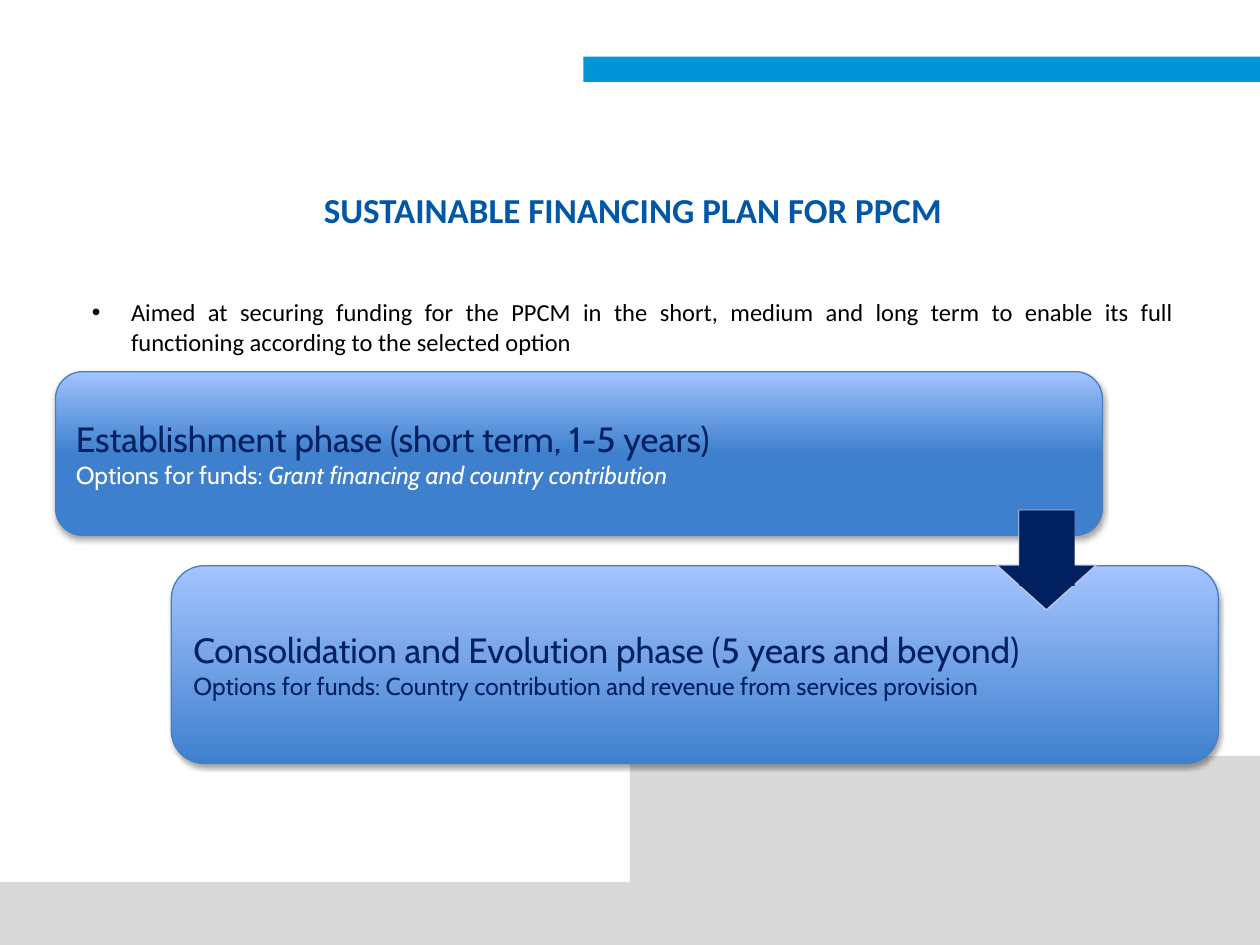
import pptx
import pptx.util
import pptx.dml.color
import pptx.enum.shapes
import pptx.enum.text
import pptx.oxml
import pptx.oxml.ns

Inches, Pt = pptx.util.Inches, pptx.util.Pt
SHAPE = pptx.enum.shapes.MSO_SHAPE
ALIGN = pptx.enum.text.PP_ALIGN
ANCHOR = pptx.enum.text.MSO_ANCHOR
qn = pptx.oxml.ns.qn
NAMESPACE = pptx.oxml.ns.nsdecls("a")

# Content
TITLE = "SUSTAINABLE FINANCING PLAN FOR PPCM"
BULLET = ("Aimed at securing funding for the PPCM in the short, medium and long term "
          "to enable its full functioning according to the selected option")
NAVY = "002060"
# Later phase first, so that the earlier one lies in front
PHASES = [
    {"at": (1.36, 4.49, 8.31, 1.57),
     "stops": [(0, "3F80CE"), (100, "A4C4FF")],
     "heading": "Consolidation and Evolution phase (5 years and beyond)",
     "funds": [("Options for funds: Country contribution and revenue from services provision", False)],
     "funds_color": NAVY},
    {"at": (0.44, 2.95, 8.31, 1.3),
     "stops": [(50, "3F80CE"), (75, "6DA1E6"), (100, "A4C4FF")],
     "heading": "Establishment phase (short term, 1-5 years)",
     "funds": [("Options for funds: ", False), ("Grant financing and country contribution", True)],
     "funds_color": "FFFFFF"},
]
# Crest of the wave: start point, then Bezier segments of three points
WAVE_START = (10.04, 6.46)
WAVE_CURVES = [((8.77, 6.22), (6.79, 6.16), (3.78, 6.63)),
               ((1, 7.07), (0.19, 6.68), (-0.02, 6.51))]
WAVE_BOTTOM = 7.5
CURVE_STEPS = 40


def rgb(value):
    return pptx.dml.color.RGBColor.from_string(value)


def place(shape, left, top, width, height):
    shape.left, shape.top = Inches(left), Inches(top)
    shape.width, shape.height = Inches(width), Inches(height)


def style_font(font, name, size, color, bold=False):
    font.name, font.size, font.bold = name, Pt(size), bold
    font.color.rgb = rgb(color)


def add_flat(shapes, kind, at, color):
    shape = shapes.add_shape(kind, *map(Inches, at))
    paint(shape, color)
    return shape


def paint(shape, color):
    shape.shadow.inherit = False
    shape.fill.solid()
    shape.fill.fore_color.rgb = rgb(color)
    shape.line.fill.background()


def bezier(points, share):
    while len(points) > 1:
        points = [tuple(a + (b - a) * share for a, b in zip(first, second))
                  for first, second in zip(points, points[1:])]
    return points[0]


def add_wave(shapes):
    crest = [WAVE_START]
    for curve in WAVE_CURVES:
        controls = [crest[-1], *curve]
        crest += [bezier(controls, step / CURVE_STEPS) for step in range(1, CURVE_STEPS + 1)]
    right, left = crest[0][0], crest[-1][0]
    builder = shapes.build_freeform(right, WAVE_BOTTOM, scale=Inches(1))
    builder.add_line_segments(crest + [(left, WAVE_BOTTOM)], close=True)
    paint(builder.convert_to_shape(), "D9D9D9")


def add_phase(shapes, phase):
    card = shapes.add_shape(SHAPE.ROUNDED_RECTANGLE, *map(Inches, phase["at"]))
    card.line.color.rgb = rgb("4B7EBC")
    card.line.width = Pt(0.75)

    # Gradient rising from the bottom edge
    card.fill.gradient()
    card.fill.gradient_angle = 90
    stop_list = card._element.spPr.find(qn("a:gradFill")).find(qn("a:gsLst"))
    for stop in list(stop_list):
        stop_list.remove(stop)
    for position, color in phase["stops"]:
        stop_list.append(pptx.oxml.parse_xml(
            f'<a:gs {NAMESPACE} pos="{position * 1000}"><a:srgbClr val="{color}"/></a:gs>'))

    # Soft shadow below
    card.shadow.inherit = False
    card._element.spPr.find(qn("a:effectLst")).append(pptx.oxml.parse_xml(
        f'<a:outerShdw {NAMESPACE} blurRad="{Pt(3.1)}" dist="{Pt(1.8)}" dir="5400000" rotWithShape="0">'
        '<a:srgbClr val="000000"><a:alpha val="35000"/></a:srgbClr></a:outerShdw>'))

    frame = card.text_frame
    frame.word_wrap = True
    frame.vertical_anchor = ANCHOR.MIDDLE
    heading, funds = frame.paragraphs[0], frame.add_paragraph()
    heading.text = phase["heading"]
    for text, italic in phase["funds"]:
        span = funds.add_run()
        span.text = text
        span.font.italic = italic
    for para, size, color in ((heading, 20, NAVY), (funds, 14, phase["funds_color"])):
        para.alignment = ALIGN.LEFT
        style_font(para.font, "Cabin", size, color)


def add_arrow(shapes):
    group = shapes.add_group_shape()
    arrow = add_flat(group.shapes, SHAPE.DOWN_ARROW, (7.91, 4.05, 0.79, 0.79), NAVY)
    arrow.adjustments[0], arrow.adjustments[1] = 0.55, 0.45
    arrow.line.color.rgb = rgb("CBD3E3")
    arrow.line.width = Pt(0.75)
    line_color = arrow._element.spPr.find(qn("a:ln")).find(qn("a:solidFill"))[0]
    line_color.append(pptx.oxml.parse_xml(f'<a:alpha {NAMESPACE} val="90000"/>'))
    add_flat(group.shapes, SHAPE.RECTANGLE, (8.09, 4.05, 0.44, 0.6), NAVY)


def fill_placeholders(slide):
    title, body = slide.shapes.title, slide.placeholders[1]
    place(title, 0.63, 1.41, 8.79, 0.5)
    title.text_frame.text = TITLE
    title.text_frame.vertical_anchor = ANCHOR.MIDDLE
    para = title.text_frame.paragraphs[0]
    para.alignment = ALIGN.CENTER
    style_font(para.font, "Calibri", 20, "0057A8", bold=True)

    place(body, 0.63, 2.31, 8.79, 0.6)
    body.text_frame.text = BULLET
    para = body.text_frame.paragraphs[0]
    para.alignment = ALIGN.JUSTIFY
    para.space_before, para.space_after = Pt(0), Pt(4)
    properties = para._p.get_or_add_pPr()
    properties.set("marL", str(Inches(0.31)))
    properties.set("indent", str(-Inches(0.31)))
    properties.append(pptx.oxml.parse_xml(f'<a:buFont {NAMESPACE} typeface="Arial"/>'))
    properties.append(pptx.oxml.parse_xml(f'<a:buChar {NAMESPACE} char="•"/>'))
    style_font(para.font, "Calibri", 14, "000000")


def main():
    deck = pptx.Presentation()
    deck.slide_width, deck.slide_height = Inches(10), Inches(7.5)
    page = deck.slides.add_slide(deck.slide_layouts[1])
    fill_placeholders(page)
    # Top band and bottom wave
    add_flat(page.shapes, SHAPE.RECTANGLE, (4.63, 0.45, 5.4, 0.2), "0095D4")
    add_wave(page.shapes)
    # Phases and the step between them
    for phase in PHASES:
        add_phase(page.shapes, phase)
    add_arrow(page.shapes)
    deck.save("out.pptx")


if __name__ == "__main__":
    main()
